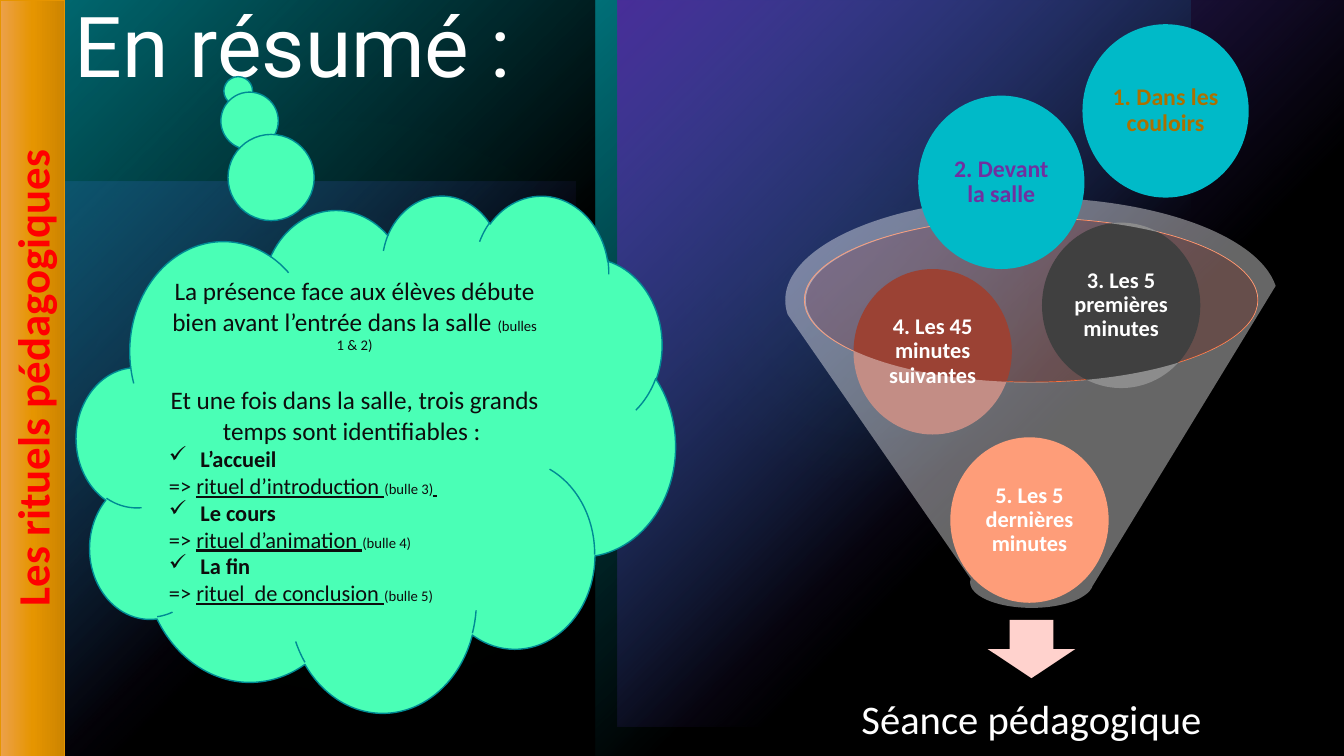
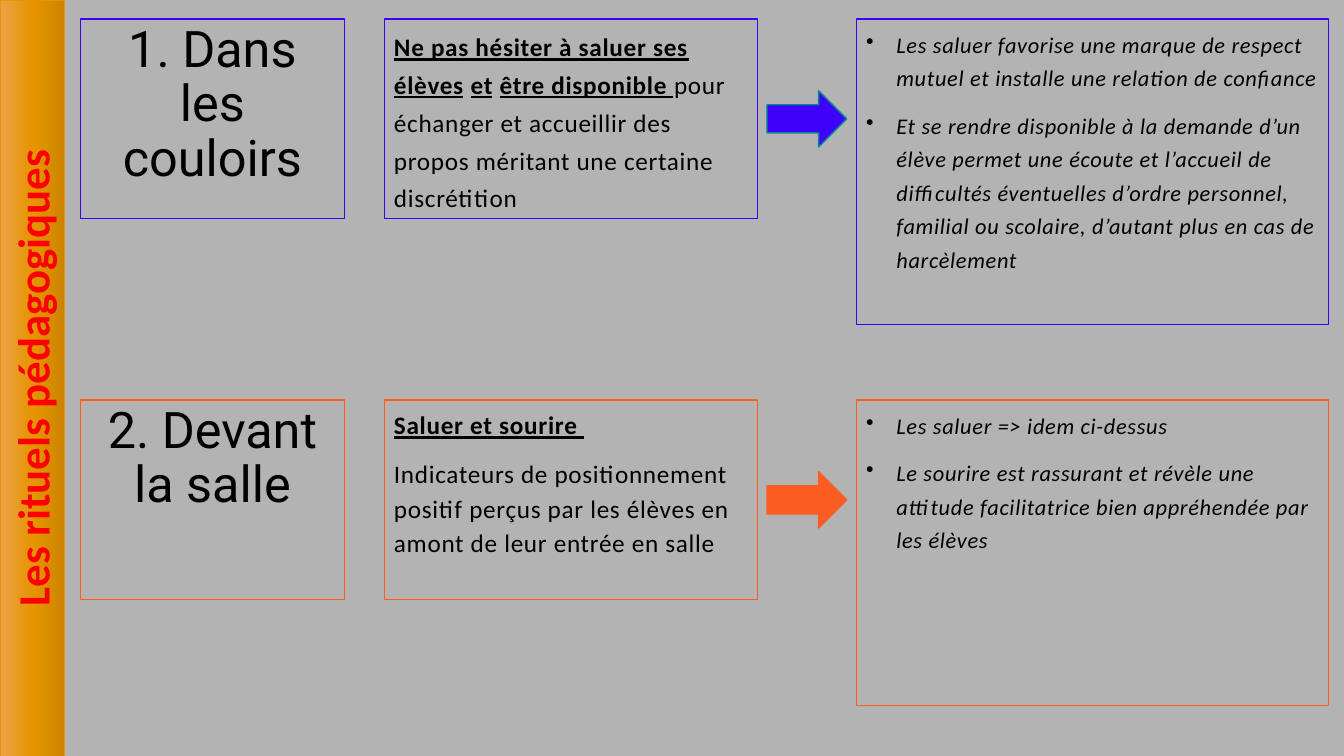
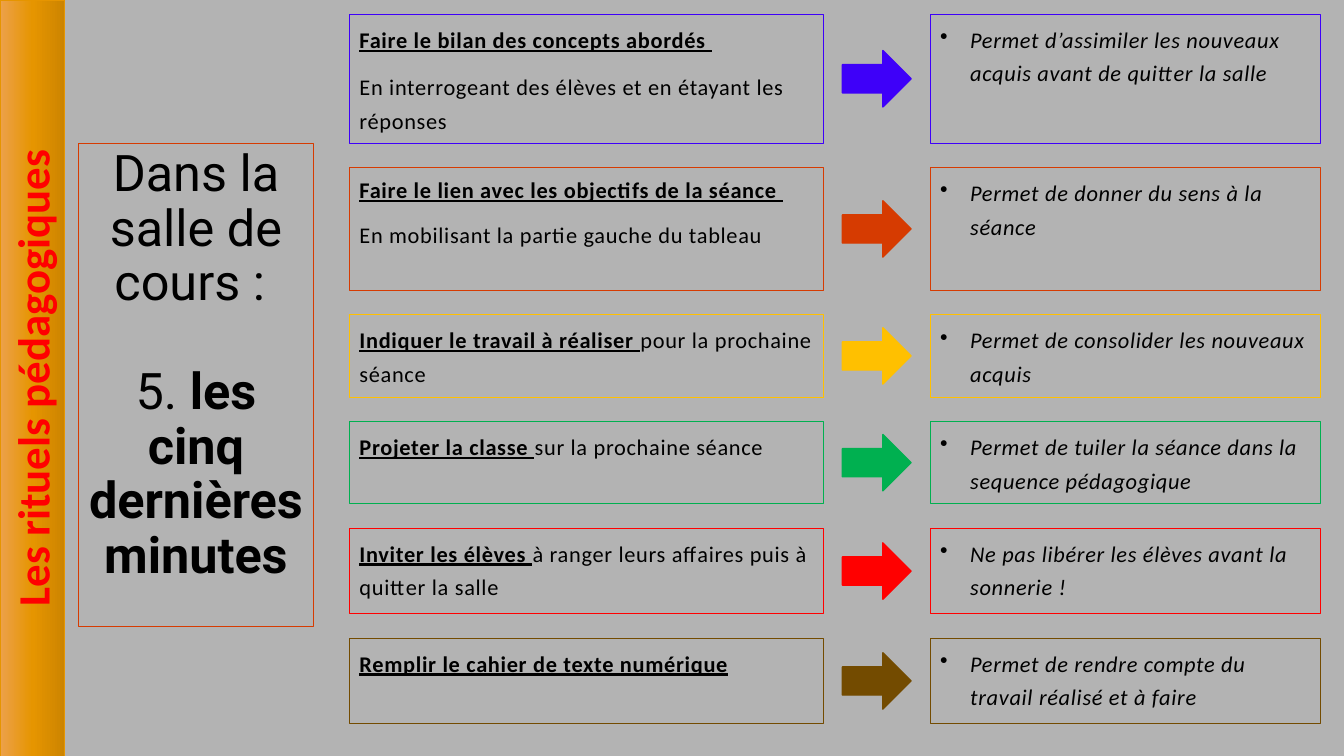
"""Builds three slides on teaching rituals."""
from lxml import etree
from pptx import Presentation
from pptx.dml.color import RGBColor
from pptx.enum.shapes import MSO_SHAPE
from pptx.enum.text import MSO_ANCHOR, PP_ALIGN
from pptx.oxml import parse_xml
from pptx.oxml.ns import nsdecls, qn
from pptx.util import Cm, Pt

RECT = MSO_SHAPE.RECTANGLE
OVAL = MSO_SHAPE.OVAL
FUNNEL = MSO_SHAPE.FUNNEL
CLOUD = MSO_SHAPE.CLOUD_CALLOUT
RIGHT_ARROW = MSO_SHAPE.RIGHT_ARROW
DOWN_ARROW = MSO_SHAPE.DOWN_ARROW
TOP, MIDDLE = MSO_ANCHOR.TOP, MSO_ANCHOR.MIDDLE
LEFT, CENTER = PP_ALIGN.LEFT, PP_ALIGN.CENTER

WIDTH, HEIGHT = 33.87, 19.05
BODY_FONT, TITLE_FONT = "Calibri", "Roboto"
COLORS = {
    "black": "000000", "white": "FFFFFF", "grey": "B3B3B3", "ink": "0D0D0D",
    "violet": "794DFF", "teal": "00BAC8", "dark_teal": "008A94",
    "emerald": "00D17D", "mint": "4AFFB6", "amber": "E69500",
    "light_amber": "ECA14B", "dark_amber": "CC8400", "ochre": "AC7000",
    "purple": "7030A0", "coral": "FE5D21", "rose": "FFC4BD",
    "pale_rose": "FFD2CD", "brick": "9B4234", "charcoal": "404040",
    "blue": "3E00F9", "rust": "D63B01", "gold": "FFC000",
    "green": "00B050", "red": "FF0000", "brown": "734B00",
}


def rgb(name):
    return RGBColor.from_string(COLORS[name])


def add_figure(page, kind, at, fill=None, line=None, weight=0.75, alpha=100):
    shape = page.shapes.add_shape(kind, *(Cm(length) for length in at))
    shape.shadow.inherit = False
    if fill:
        shape.fill.solid()
        shape.fill.fore_color.rgb = rgb(fill)
        if alpha < 100:
            color = shape._element.spPr.find(qn("a:solidFill"))[0]
            etree.SubElement(color, qn("a:alpha")).set("val", str(alpha * 1000))
    else:
        shape.fill.background()
    if line:
        shape.line.color.rgb = rgb(line)
        shape.line.width = Pt(weight)
    else:
        shape.line.fill.background()
    return shape


def set_gradient(shape, stops, direction):
    marks = "".join(
        f'<a:gs pos="{place * 1000}"><a:srgbClr val="{COLORS[color]}">'
        f'<a:alpha val="{alpha * 1000}"/></a:srgbClr></a:gs>'
        for place, color, alpha in stops)
    gradient = parse_xml(
        f'<a:gradFill {nsdecls("a")} rotWithShape="1">'
        f'<a:gsLst>{marks}</a:gsLst>{direction}</a:gradFill>')
    properties = shape._element.spPr
    properties.replace(properties.find(qn("a:noFill")), gradient)


def add_glow(page, kind, at, color, alpha, focus=(0, 0, 100, 100)):
    glow = add_figure(page, kind, at)
    sides = " ".join(f'{side}="{part * 1000}"' for side, part in zip("ltrb", focus))
    set_gradient(glow, [(0, color, alpha), (60, color, 0), (100, color, 0)],
                 f'<a:path path="circle"><a:fillToRect {sides}/></a:path>')


def set_frame(shape, anchor=TOP, inset=None):
    frame = shape.text_frame
    frame.word_wrap = True
    frame.vertical_anchor = anchor
    if inset is not None:
        frame.margin_left = frame.margin_right = Cm(inset)
        frame.margin_top = frame.margin_bottom = Cm(inset)
    return frame


def add_para(frame, spans, size, color="black", font=BODY_FONT, align=LEFT,
             bold=None, italic=None, spacing=None, before=0, after=0,
             bullet=None, indent=0.76, tracking=0):
    """Spans are (text, marks[, size]); b in marks is bold and u underlined."""
    para = frame.paragraphs[0]
    if para.runs:
        para = frame.add_paragraph()
    if bullet:
        properties = para._p.get_or_add_pPr()
        properties.set("marL", str(Cm(indent)))
        properties.set("indent", str(-Cm(indent)))
        etree.SubElement(properties, qn("a:buChar")).set("char", bullet)
    para.alignment = align
    para.space_before, para.space_after = Pt(before), Pt(after)
    if spacing:
        para.line_spacing = spacing
    para.font.name, para.font.size = font, Pt(size)
    para.font.color.rgb = rgb(color)
    para.font.bold, para.font.italic = bold, italic
    if tracking:
        para.font._rPr.set("spc", str(tracking))
    for text, marks, *own_size in spans:
        span = para.add_run()
        span.text = text
        if "b" in marks:
            span.font.bold = True
        if "u" in marks:
            span.font.underline = True
        if own_size:
            span.font.size = Pt(own_size[0])


def add_page(deck, background):
    page = deck.slides.add_slide(deck.slide_layouts[6])
    page.background.fill.solid()
    page.background.fill.fore_color.rgb = rgb(background)
    return page


def add_side_band(page):
    thickness = 1.63
    offset = (HEIGHT - thickness) / 2
    band = add_figure(page, RECT, (-offset, offset, HEIGHT, thickness),
                      line="amber", weight=0.5)
    band.rotation = 270
    set_gradient(band, [(0, "light_amber", 100), (50, "amber", 100),
                        (100, "dark_amber", 100)], '<a:lin ang="5400000" scaled="0"/>')
    add_para(set_frame(band), [("Les rituels pédagogiques", "b")], 32, "red",
             align=CENTER)


def add_heading(page, at, line, paras):
    frame = set_frame(add_figure(page, RECT, at, line=line))
    for number, spans in enumerate(paras):
        add_para(frame, spans, 36, font=TITLE_FONT, align=CENTER, spacing=0.9,
                 before=39 if number else 0)


def add_advice(page, at, line, paras, size, spacing):
    frame = set_frame(add_figure(page, RECT, at, line=line))
    for spans in paras:
        add_para(frame, spans, size, spacing=spacing, before=10, tracking=50)


def add_reasons(page, at, line, reasons):
    frame = set_frame(add_figure(page, RECT, at, line=line))
    for reason in reasons:
        add_para(frame, [(reason, "")], 16, italic=True, spacing=1.25,
                 before=10, bullet="•", tracking=50)


def add_arrow(page, left, middle, width, color, line=None):
    height = 1.42
    add_figure(page, RIGHT_ARROW, (left, middle - height / 2, width, height),
               color, line or color, 1)


def add_bubble(page, left, top, size, fill, text, points, color="white"):
    bubble = add_figure(page, OVAL, (left, top, *size), fill)
    add_para(set_frame(bubble, MIDDLE, 0.05), [(text, "b")], points, color,
             align=CENTER, spacing=0.9)


def add_backdrop(page):
    centre = (50, 50, 50, 50)
    add_glow(page, RECT, (0, 4.57, 14.5, 14.5), "violet", 60)
    add_glow(page, OVAL, (15.98, 1.09, 11.99, 11.99), "emerald", 15, centre)
    add_glow(page, OVAL, (0, 1.42, 17.63, 17.63), "emerald", 5, centre)
    for column in range(2):
        add_glow(page, RECT, (column * 15, 0, 15, HEIGHT), "teal", 100)
    add_glow(page, RECT, (15.56, 0, 18.31, 18.31), "violet", 100)
    add_figure(page, RECT, (0, 0, WIDTH, HEIGHT), "black", alpha=40)


def add_funnel(page):
    add_figure(page, OVAL, (20.27, 5.49, 11.43, 4.14), "rose", "coral", 0.5, 40)
    add_figure(page, DOWN_ARROW, (24.89, 15.62, 2.21, 1.47), "pale_rose")
    outcome = page.shapes.add_textbox(Cm(20.68), Cm(16.79), Cm(10.64), Cm(2.77))
    add_para(set_frame(outcome, MIDDLE, 0.58), [("Séance pédagogique", "")], 29,
             "white", align=CENTER, spacing=0.9)
    small, large = (3.99, 4.17), (4.19, 4.37)
    for left, top, fill, text in (
            (23.95, 11.02, "coral", "5. Les 5 dernières minutes"),
            (21.51, 6.78, "brick", "4. Les 45 minutes suivantes"),
            (26.26, 5.61, "charcoal", "3. Les 5 premières minutes")):
        add_bubble(page, left, top, small, fill, text, 16)
    add_figure(page, FUNNEL, (19.79, 4.98, 12.42, 10.34), "white", alpha=40)
    add_bubble(page, 27.28, 0.61, large, "teal", "1. Dans les couloirs", 17, "ochre")
    add_bubble(page, 23.14, 2.41, large, "teal", "2. Devant la salle", 17, "purple")


def add_cloud(page):
    cloud = add_figure(page, CLOUD, (1.93, 4.9, 15.09, 13.03), "mint", "dark_teal", 1)
    cloud.adjustments[0], cloud.adjustments[1] = -0.23, -0.7
    frame = set_frame(cloud, MIDDLE)
    add_para(frame, [("La présence face aux élèves débute bien avant l’entrée dans la salle ", ""),
                     ("(bulles 1 & 2)", "", 10.5)], 18, "ink", align=CENTER, after=22)
    add_para(frame, [("Et une fois dans la salle, trois grands temps sont identifiables : ", "")],
             18, "ink", align=CENTER)
    for moment, ritual, note in (
            ("L’accueil", "rituel d’introduction ", [("(bulle 3)", "", 10.5), (" ", "u", 10.5)]),
            ("Le cours", "rituel d’animation ", [("(bulle 4)", "", 10.5)]),
            ("La fin", "rituel  de conclusion ", [("(bulle 5)", "", 10.5)])):
        add_para(frame, [(moment, "b")], 16, "ink", bullet="✓", indent=0.79)
        add_para(frame, [("=> ", ""), (ritual, "u"), *note], 16, "ink")


def build_summary(deck):
    page = add_page(deck, "black")
    add_backdrop(page)
    title = page.shapes.add_textbox(Cm(1.63), 0, Cm(30.84), Cm(2.79))
    add_para(set_frame(title), [("En résumé :", "")], 60, "white", TITLE_FONT,
             spacing=0.9)
    add_side_band(page)
    add_funnel(page)
    add_cloud(page)


def build_before_class(deck):
    page = add_page(deck, "grey")
    add_side_band(page)
    rows = (
        ("1. Dans les couloirs", "blue", "dark_teal", 1.25,
         [[("Ne pas hésiter à saluer ses élèves", "bu"), (" ", ""), ("et", "bu"), (" ", ""),
           ("être disponible ", "bu"),
           ("pour échanger et accueillir des propos méritant une certaine discrétition", "")]],
         ["Les saluer favorise une marque de respect mutuel et installe une relation de confiance",
          "Et se rendre disponible à la demande d’un élève permet une écoute et l’accueil de "
          "difficultés éventuelles d’ordre personnel, familial ou scolaire, d’autant plus en "
          "cas de harcèlement"]),
        ("2. Devant la salle", "coral", "coral", 1.15,
         [[("Saluer et sourire ", "bu")],
          [("Indicateurs de positionnement positif perçus par les élèves en amont de leur "
            "entrée en salle", "")]],
         ["Les saluer => idem ci-dessus",
          "Le sourire est rassurant et révèle une attitude facilitatrice bien appréhendée par "
          "les élèves"]),
    )
    height = 5.03
    for number, (title, color, edge, spacing, advice, reasons) in enumerate(rows):
        top = 0.48 + number * 9.6
        add_heading(page, (2.03, top, 6.65, height), color, [[(title, "")]])
        add_advice(page, (9.68, top, 9.42, height), color, advice, 18, spacing)
        add_arrow(page, 19.33, top + height / 2, 2.01, color, edge)
        add_reasons(page, (21.58, top, 11.89, 7.7), color, reasons)


def build_last_minutes(deck):
    page = add_page(deck, "grey")
    add_side_band(page)
    add_heading(page, (1.98, 3.61, 5.92, 12.17), "rust",
                [[("Dans la salle de cours : ", "")],
                 [("5. ", ""), ("les cinq dernières minutes", "b")]])
    rows = (
        ("blue", 3.25, 1.25,
         [[("Faire le bilan des concepts abordés ", "bu")],
          [("En interrogeant des élèves et en étayant les réponses", "")]],
         "Permet d’assimiler les nouveaux acquis avant de quitter la salle"),
        ("rust", 3.1, 1.15,
         [[("Faire le lien avec les objectifs de la séance ", "bu")],
          [("En mobilisant la partie gauche du tableau", "")]],
         "Permet de donner du sens à la séance"),
        ("gold", 2.08, 1.25,
         [[("Indiquer le travail à réaliser ", "bu"), ("pour la prochaine séance", "")]],
         "Permet de consolider les nouveaux acquis"),
        ("green", 2.08, 1.25,
         [[("Projeter la classe ", "bu"), ("sur la prochaine séance", "")]],
         "Permet de tuiler la séance dans la sequence pédagogique"),
        ("red", 2.16, 1.25,
         [[("Inviter les élèves ", "bu"),
           ("à ranger leurs affaires puis à quitter la salle", "")]],
         "Ne pas libérer les élèves avant la sonnerie !"),
        ("brown", 2.16, 1.25,
         [[("Remplir le cahier de texte numérique", "bu")]],
         "Permet de rendre compte du travail réalisé et à faire"),
    )
    top, gap = 0.36, 0.61
    for color, height, spacing, advice, reason in rows:
        add_advice(page, (8.81, top, 11.94, height), color, advice, 16, spacing)
        add_arrow(page, 21.23, top + height / 2, 1.73, color)
        add_reasons(page, (23.44, top, 9.83, height), color, [reason])
        top += height + gap


def main():
    deck = Presentation()
    deck.slide_width, deck.slide_height = Cm(WIDTH), Cm(HEIGHT)
    build_summary(deck)
    build_before_class(deck)
    build_last_minutes(deck)
    deck.save("out.pptx")


if __name__ == "__main__":
    main()
